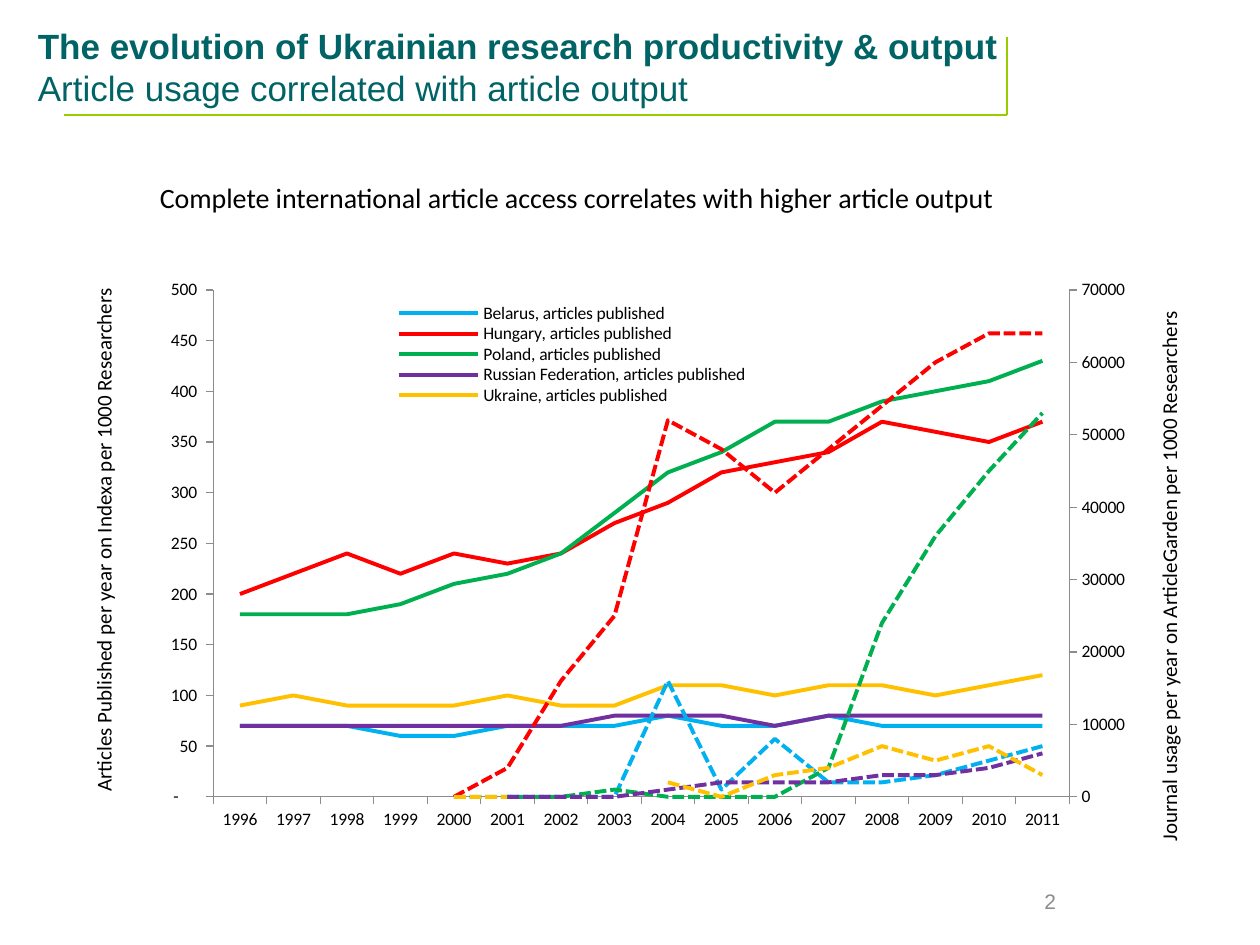
from copy import deepcopy
from lxml import etree
from pptx import Presentation, util as u
from pptx.chart.axis import CategoryAxis, ValueAxis
from pptx.chart.data import CategoryChartData
from pptx.dml.color import RGBColor
from pptx.enum import chart as ch, dml, shapes, text
from pptx.oxml import parse_xml
from pptx.oxml.ns import nsdecls, qn

TEAL = RGBColor(0x00, 0x63, 0x66)
LIME = RGBColor(0x99, 0xCC, 0x00)
GRAY = RGBColor(0x8C, 0x8C, 0x8C)
BLACK = RGBColor(0, 0, 0)
HUES = [RGBColor(0x00, 0xB0, 0xF0), RGBColor(0xFF, 0, 0),
        RGBColor(0x00, 0xB0, 0x50), RGBColor(0x70, 0x30, 0xA0),
        RGBColor(0xFF, 0xC0, 0)]

HEAD = [("The evolution of Ukrainian research productivity & output", True),
        ("Article usage correlated with article output", False)]

# words, box (left, top, width, height), rotation, format, alignment
NOTES = [
    ("2", (7.17, 6.95, 2.33, 0.4), 0,
     dict(size=12, name="Arial", color=GRAY), text.PP_ALIGN.CENTER),
    ("Journal usage per year on ArticleGarden per 1000 Researchers",
     (6.75, 4.1, 5.05, 0.3), 270,
     dict(size=12, name="Calibri", color=BLACK), text.PP_ALIGN.LEFT),
    ("Articles Published per year on Indexa per 1000 Researchers",
     (-1.56, 3.85, 4.76, 0.3), 270,
     dict(size=12, name="Calibri", color=BLACK), text.PP_ALIGN.LEFT),
    ("Complete international article access correlates with higher article output",
     (1.17, 1.38, 7.41, 0.37), 0,
     dict(size=16, name="Calibri", color=BLACK), text.PP_ALIGN.LEFT),
]
RULES = [(7.99, 0.29, 7.99, 0.91), (0.51, 0.91, 7.99, 0.91)]

YEARS = range(1996, 2012)
LANDS = ["Belarus", "Hungary", "Poland", "Russian Federation", "Ukraine"]
OUTPUT = [
    [70, 70, 70, 60, 60, 70, 70, 70, 80, 70, 70, 80, 70, 70, 70, 70],
    [200, 220, 240, 220, 240, 230, 240, 270, 290, 320, 330, 340, 370, 360, 350, 370],
    [180, 180, 180, 190, 210, 220, 240, 280, 320, 340, 370, 370, 390, 400, 410, 430],
    [70, 70, 70, 70, 70, 70, 70, 80, 80, 80, 70, 80, 80, 80, 80, 80],
    [90, 100, 90, 90, 90, 100, 90, 90, 110, 110, 100, 110, 110, 100, 110, 120],
]
# thousands, ending in 2011
USAGE = [
    [0, 0, 0, 16, 1, 8, 2, 2, 3, 5, 7],
    [0, 4, 16, 25, 52, 48, 42, 48, 54, 60, 64, 64],
    [0, 0, 0, 1, 0, 0, 0, 4, 24, 36, 45, 53],
    [0, 0, 0, 1, 2, 2, 2, 3, 3, 4, 6],
    [0, 0, None, None, 2, 0, 3, 4, 7, 5, 7, 3],
]
CHART = (1.17, 1.82, 7.91, 4.86)
PLOT = (0.066, 0.099, 0.859, 0.828)
LEGEND = (0.246, 0.12, 0.36, 0.168)
COUNT = '_-* #,##0_-;\\-* #,##0_-;_-* "-"??_-;_-@_'


def inches(box):
    return [u.Inches(v) for v in box]


def style(font, size, name, color, bold=False):
    looks = dict(size=u.Pt(size), name=name, bold=bold)
    for key, val in looks.items():
        setattr(font, key, val)
    font.color.rgb = color


def layout(box, inner=False):
    """Manual chart layout, in shares of the chart's size."""
    target = '<c:layoutTarget val="inner"/>' if inner else ""
    modes = '<c:xMode val="edge"/><c:yMode val="edge"/>'
    sizes = "".join(f'<c:{k} val="{v}"/>' for k, v in zip("xywh", box))
    return parse_xml(f'<c:layout {nsdecls("c")}><c:manualLayout>{target}{modes}'
                     f'{sizes}</c:manualLayout></c:layout>')


def scale(axis, top, step, form):
    looks = dict(minimum_scale=0, maximum_scale=top, major_unit=step,
                 has_major_gridlines=False, major_tick_mark=ch.XL_TICK_MARK.OUTSIDE)
    for key, val in looks.items():
        setattr(axis, key, val)
    axis.tick_labels.number_format = form
    axis.tick_labels.number_format_is_linked = False
    axis.format.line.color.rgb = GRAY


def split(chart, count):
    """Move the series after the first few to a second pair of axes."""
    area = chart.plots[0]._element.getparent()
    first = area.find(qn("c:lineChart"))
    second = deepcopy(first)
    for ser in first.findall(qn("c:ser"))[count:]:
        first.remove(ser)
    for ser in second.findall(qn("c:ser"))[:count]:
        second.remove(ser)
    first.addnext(second)

    cat, val = chart.category_axis._element, chart.value_axis._element
    cat2, val2 = deepcopy(cat), deepcopy(val)
    val.addnext(val2)
    val2.addnext(cat2)
    for axis, own, other in ((cat2, "501", "502"), (val2, "502", "501")):
        axis.find(qn("c:axId")).set("val", own)
        axis.find(qn("c:crossAx")).set("val", other)
    for ref, num in zip(second.findall(qn("c:axId")), ("501", "502")):
        ref.set("val", num)
    val2.find(qn("c:axPos")).set("val", "r")
    val2.find(qn("c:crosses")).set("val", "max")
    CategoryAxis(cat2).visible = False
    scale(ValueAxis(val2), 70000, 10000, "General")


def draw_chart(slide):
    data = CategoryChartData()
    data.categories = [str(y) for y in YEARS]
    for land, vals in zip(LANDS, OUTPUT):
        data.add_series(f"{land}, articles published", vals)
    for land, vals in zip(LANDS, USAGE):
        gap = [None] * (len(YEARS) - len(vals))
        data.add_series(f"{land}, journal usage",
                        gap + [v if v is None else v * 1000 for v in vals])
    chart = slide.shapes.add_chart(ch.XL_CHART_TYPE.LINE, *inches(CHART), data).chart
    style(chart.font, 10, "Calibri", BLACK)
    chart.has_title = False
    chart.plots[0].vary_by_categories = False
    for i, ser in enumerate(chart.plots[0].series):
        ser.smooth = False
        ser.marker.style = ch.XL_MARKER_STYLE.NONE
        line = ser.format.line
        line.color.rgb = HUES[i % len(HUES)]
        line.width = u.Pt(2.25)
        if i >= len(LANDS):
            line.dash_style = dml.MSO_LINE.SQUARE_DOT

    chart.category_axis.major_tick_mark = ch.XL_TICK_MARK.OUTSIDE
    chart.category_axis.format.line.color.rgb = GRAY
    scale(chart.value_axis, 500, 50, COUNT)
    split(chart, len(LANDS))

    area = chart.plots[0]._element.getparent()
    for old in area.findall(qn("c:layout")):
        area.remove(old)
    area.insert(0, layout(PLOT, inner=True))

    chart.has_legend = True
    legend = chart.legend
    legend.position = ch.XL_LEGEND_POSITION.TOP
    legend.include_in_layout = False
    root = legend._element
    for old in root.findall(qn("c:layout")):
        root.remove(old)
    spot = root.find(qn("c:legendPos"))
    spot.addnext(layout(LEGEND))
    for i in reversed(range(len(LANDS), 2 * len(LANDS))):
        spot.addnext(parse_xml(f'<c:legendEntry {nsdecls("c")}><c:idx val="{i}"/>'
                               '<c:delete val="1"/></c:legendEntry>'))


def main():
    deck = Presentation()
    deck.slide_width, deck.slide_height = inches((10, 7.5))
    slide = deck.slides.add_slide(deck.slide_layouts[5])

    for ends in RULES:
        rule = slide.shapes.add_connector(shapes.MSO_CONNECTOR.STRAIGHT, *inches(ends))
        rule.line.color.rgb = LIME
        rule.line.width = u.Pt(1)
        etree.SubElement(rule._element.spPr, qn("a:effectLst"))

    title = slide.shapes.title
    title.left, title.top, title.width, title.height = inches((0.2, 0.06, 9.52, 0.85))
    frame = title.text_frame
    frame.auto_size = text.MSO_AUTO_SIZE.NONE
    frame.vertical_anchor = text.MSO_ANCHOR.BOTTOM
    para = frame.paragraphs[0]
    para.alignment = text.PP_ALIGN.LEFT
    for i, (words, bold) in enumerate(HEAD):
        if i:
            para.add_line_break()
        run = para.add_run()
        run.text = words
        style(run.font, 20, "Arial", TEAL, bold)

    draw_chart(slide)
    for words, box, turn, look, side in NOTES:
        note = slide.shapes.add_textbox(*inches(box))
        note.rotation = turn
        note.text_frame.word_wrap = True
        note.text_frame.vertical_anchor = text.MSO_ANCHOR.MIDDLE
        para = note.text_frame.paragraphs[0]
        para.alignment = side
        run = para.add_run()
        run.text = words
        style(run.font, **look)
    deck.save("out.pptx")


if __name__ == "__main__":
    main()
